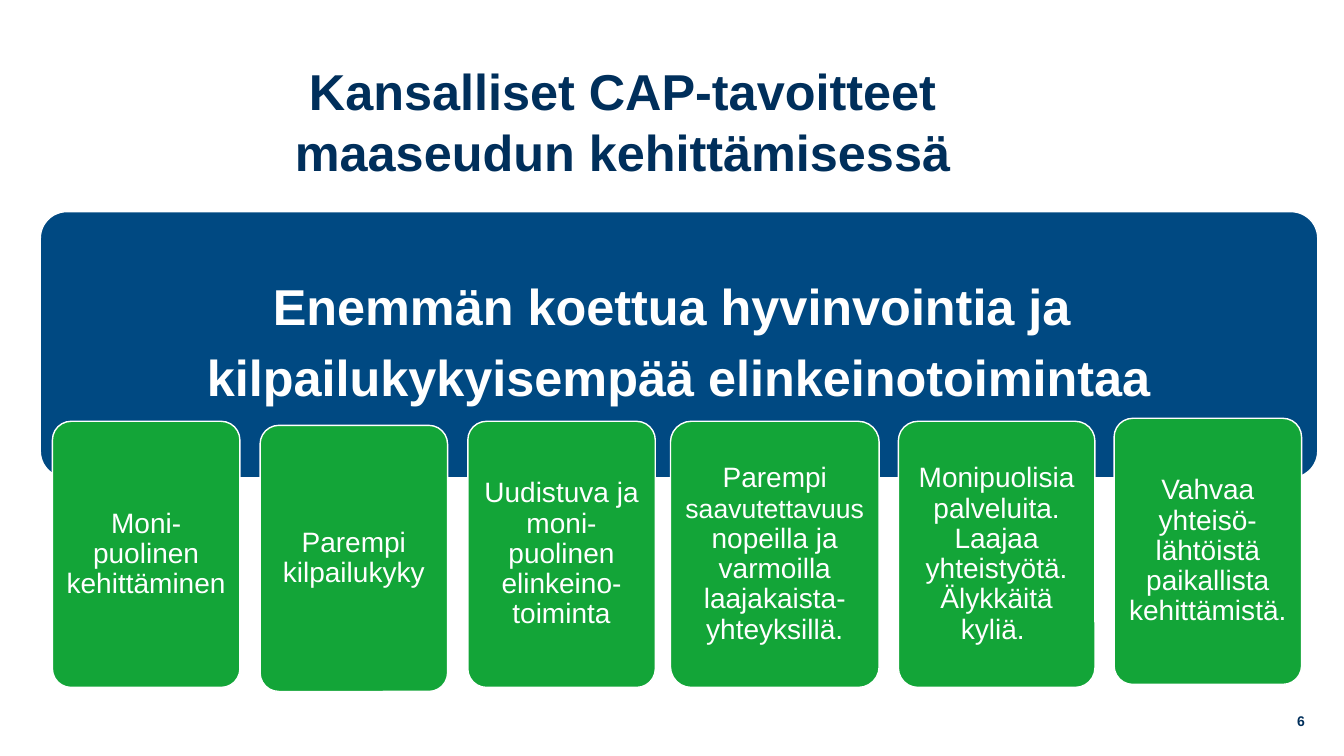
from pptx import Presentation
from pptx import util as u
from pptx.dml.color import RGBColor
from pptx.enum import shapes, text

NAVY, BLUE, GREEN, WHITE = "002F5B", "004982", "13A538", "FFFFFF"
CORNER = 0.1  # corner radius as a share of the shorter side

# Left, top, width, text runs with their sizes
GOALS = [
    (0.52, 4.18, 1.86, [("Moni-puolinen kehittäminen", 20)]),
    (2.58, 4.22, 1.86, [("Parempi kilpailukyky", 20)]),
    (4.64, 4.18, 1.86,
     [("Uudistuva ja moni-puolinen elinkeino-toiminta", 20)]),
    (6.65, 4.18, 2.07,
     [("Parempi ", 20), ("saavutettavuus", 19),
      (" nopeilla ja varmoilla laajakaista-yhteyksillä.", 20)]),
    (8.91, 4.18, 1.95,
     [("Monipuolisia palveluita. Laajaa yhteistyötä. Älykkäitä kyliä. ", 20)]),
    (11.05, 4.15, 1.86,
     [("Vahvaa yhteisö-lähtöistä paikallista kehittämistä. ", 20)]),
]


def color(value):
    return RGBColor.from_string(value)


def style_font(font, size, value, bold=False):
    font.name = "Arial"
    font.size = u.Pt(size)
    font.bold = bold
    font.color.rgb = color(value)


def add_label(page, place, words, size, align):
    box = page.shapes.add_textbox(*map(u.Inches, place))
    frame = box.text_frame
    frame.word_wrap = True
    frame.vertical_anchor = text.MSO_ANCHOR.MIDDLE
    frame.text = words
    para = frame.paragraphs[0]
    para.alignment = align
    for span in para.runs:
        style_font(span.font, size, NAVY, True)


def add_card(page, place, fill, margin, paragraphs, space_after, bold=False):
    """Rounded box; each paragraph is a list of (words, size) runs."""
    card = page.shapes.add_shape(
        shapes.MSO_SHAPE.ROUNDED_RECTANGLE, *map(u.Inches, place))
    card.adjustments[0] = CORNER
    card.shadow.inherit = False
    card.fill.solid()
    card.fill.fore_color.rgb = color(fill)
    card.line.color.rgb = color(WHITE)
    card.line.width = u.Pt(1)

    frame = card.text_frame
    frame.word_wrap = True
    frame.vertical_anchor = text.MSO_ANCHOR.MIDDLE
    frame.margin_left = frame.margin_right = u.Inches(margin)
    frame.margin_top = frame.margin_bottom = u.Inches(margin)
    for index, runs in enumerate(paragraphs):
        para = frame.add_paragraph() if index else frame.paragraphs[0]
        para.alignment = text.PP_ALIGN.CENTER
        para.line_spacing = 0.9
        para.space_after = u.Pt(space_after)
        for words, size in runs:
            span = para.add_run()
            span.text = words
            style_font(span.font, size, WHITE, bold)


def main():
    deck = Presentation()
    deck.slide_width, deck.slide_height = u.Inches(13.33), u.Inches(7.5)
    page = deck.slides.add_slide(deck.slide_layouts[6])

    # Title
    add_label(page, (0.55, 0.55, 11.39, 1.3),
              "Kansalliset CAP-tavoitteet \vmaaseudun kehittämisessä ",
              36, text.PP_ALIGN.CENTER)

    # Main goal banner
    add_card(page, (0.4, 2.1, 12.67, 2.64), BLUE, 0.15,
             [[("Enemmän koettua hyvinvointia ja ", 36)],
              [("kilpailukykyisempää elinkeinotoimintaa", 36)]], 12, True)

    # Goal cards
    for left, top, width, runs in GOALS:
        add_card(page, (left, top, width, 2.64), GREEN, 0.07, [runs], 7)

    # Page number
    add_label(page, (10.04, 6.95, 3, 0.4), "6", 10, text.PP_ALIGN.RIGHT)

    deck.save("out.pptx")


if __name__ == "__main__":
    main()
